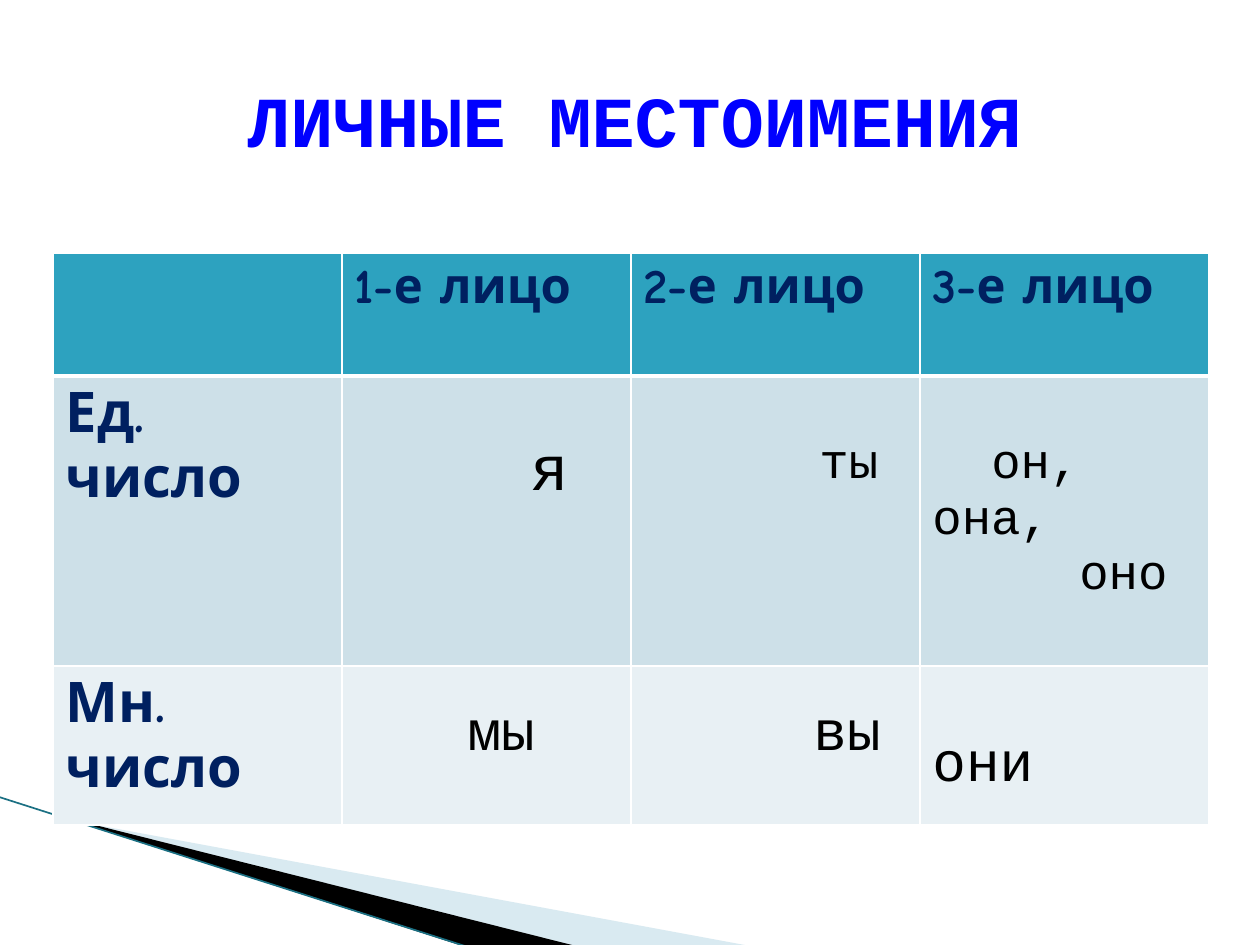
import lxml.etree
import pptx
import pptx.dml.color
import pptx.enum.shapes
import pptx.enum.text
import pptx.oxml
import pptx.oxml.ns
import pptx.util

PX = 914400 / 126
NAVY, BLACK, WHITE = "002060", "000000", "FFFFFF"
qn = pptx.oxml.ns.qn


def color(value):
    return pptx.dml.color.RGBColor.from_string(value)


def write(para, text, size, font="Courier New", ink=BLACK, bold=False, left=0, indent=0):
    """Fill a paragraph; left and indent are in px."""
    properties = para._p.get_or_add_pPr()
    properties.set("marL", str(round(left * PX)))
    properties.set("indent", str(round(indent * PX)))
    span = para.add_run()
    span.text = text
    span.font.name, span.font.size = font, pptx.util.Pt(size)
    span.font.bold, span.font.color.rgb = bold, color(ink)


deck = pptx.Presentation()
deck.slide_width, deck.slide_height = round(1260 * PX), round(945 * PX)
page = deck.slides.add_slide(deck.slide_layouts[6])

# Corner wedges and the thin line beside them
wedges = [
    ("A0CBDC", 40, [(69, 820), (750, 946), (575, 946), (69, 819)]),
    (BLACK, 100, [(67, 818), (576, 946), (469, 948), (68, 819)]),
]
for fill, opacity, points in wedges:
    builder = page.shapes.build_freeform(*points[0], scale=PX)
    builder.add_line_segments(points[1:], close=True)
    wedge = builder.convert_to_shape()
    wedge.shadow.inherit = False
    wedge.fill.solid()
    wedge.fill.fore_color.rgb = color(fill)
    wedge.line.fill.background()
    if opacity < 100:
        tint = wedge._element.spPr.find(".//" + qn("a:srgbClr"))
        lxml.etree.SubElement(tint, qn("a:alpha"), val=str(opacity * 1000))

ends = [round(value * PX) for value in (-1, 797, 468, 947)]
edge = page.shapes.add_connector(pptx.enum.shapes.MSO_CONNECTOR.STRAIGHT, *ends)
edge.line.color.rgb = color("1B7083")
edge.line.width = pptx.util.Pt(0.95)
lxml.etree.SubElement(edge._element.spPr, qn("a:effectLst"))

# Pronoun table
columns, heights = [289] * 4, [123, 290, 159]
frame = [round(value * PX) for value in (53, 253, sum(columns), sum(heights))]
table = page.shapes.add_table(len(heights), len(columns), *frame).table
for column, width in zip(table.columns, columns):
    column.width = round(width * PX)
for row, height in zip(table.rows, heights):
    row.height = round(height * PX)

fills = ["2DA2BF", "CDE0E8", "E8F0F4"]
for r, fill in enumerate(fills):
    for c in range(len(columns)):
        cell = table.cell(r, c)
        cell.fill.solid()
        cell.fill.fore_color.rgb = color(fill)
        properties = cell._tc.get_or_add_tcPr()
        thick = {0: "lnB", 1: "lnT"}.get(r)
        for position, side in enumerate(("lnL", "lnR", "lnT", "lnB")):
            border = lxml.etree.Element(qn("a:" + side))
            border.set("w", str(pptx.util.Pt(3 if side == thick else 1)))
            solid = lxml.etree.SubElement(border, qn("a:solidFill"))
            lxml.etree.SubElement(solid, qn("a:srgbClr"), val=WHITE)
            properties.insert(position, border)

headings = [
    (0, 1, "1-е лицо", 28), (0, 2, "2-е лицо", 28), (0, 3, "3-е лицо", 28),
    (1, 0, "Ед. число", 32), (2, 0, "Мн. число", 32),
]
for r, c, text, size in headings:
    write(table.cell(r, c).text_frame.paragraphs[0], text, size,
          font="Comic Neue", ink=NAVY, bold=True)

# Row, column, top margin, then text, size, left and first-line indent
pronouns = [
    (1, 1, 62, [("я", 36, 176, 0)]),
    (1, 2, 62, [("ты", 28, 176, 0)]),
    (1, 3, 62, [("он, она,", 28, 0, 59), ("оно", 28, 147, 0)]),
    (2, 1, 38, [("мы", 32, 113, 0)]),
    (2, 2, 38, [("вы", 32, 170, 0)]),
    (2, 3, 69, [("они", 32, 0, 0)]),
]
for r, c, top, lines in pronouns:
    cell = table.cell(r, c)
    cell.margin_top = round(top * PX)
    for number, (text, size, left, indent) in enumerate(lines):
        body = cell.text_frame
        para = body.add_paragraph() if number else body.paragraphs[0]
        write(para, text, size, left=left, indent=indent)

# Title
box = page.shapes.add_textbox(*[round(value * PX) for value in (63, 38, 1134, 161)])
box.text_frame.word_wrap = True
box.text_frame.vertical_anchor = pptx.enum.text.MSO_ANCHOR.MIDDLE
write(box.text_frame.paragraphs[0], "ЛИЧНЫЕ МЕСТОИМЕНИЯ", 41,
      ink="0000FF", bold=True, left=172)

deck.save("out.pptx")
